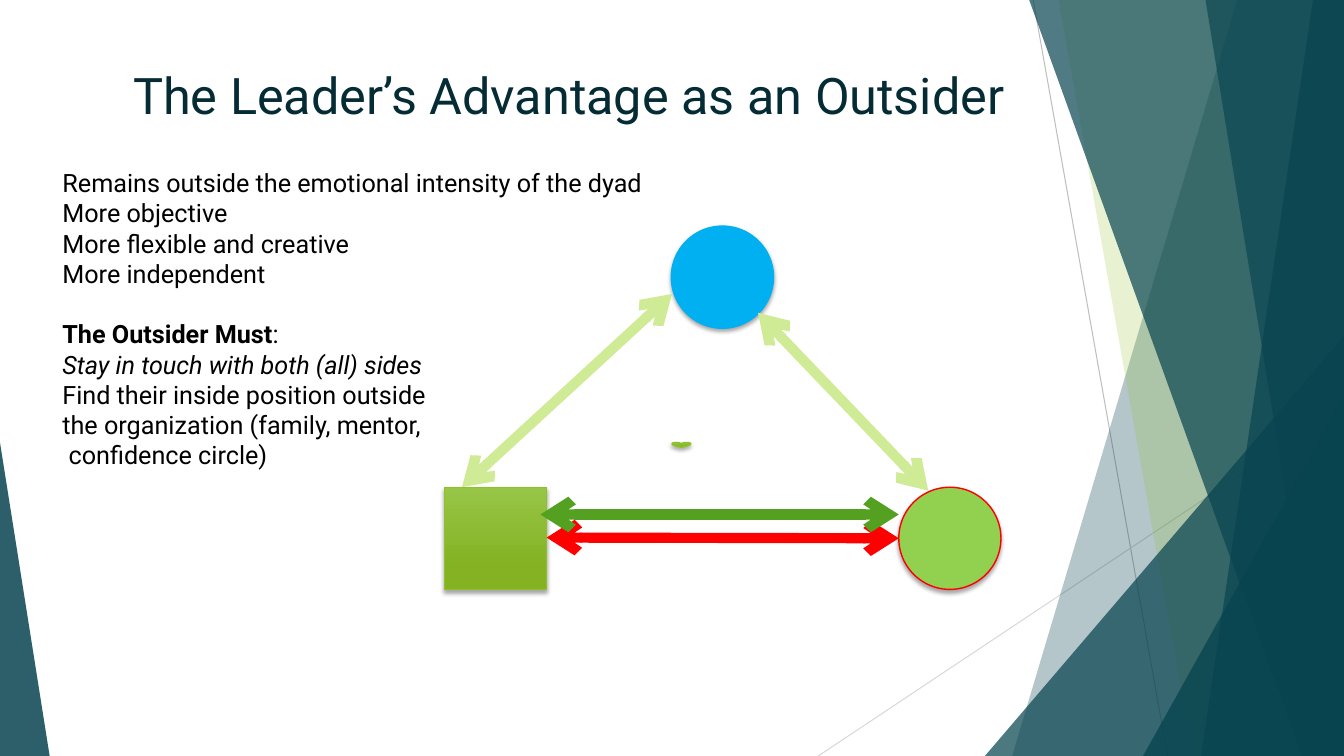
from lxml import etree
from pptx import Presentation
from pptx.dml.color import RGBColor
from pptx.enum import shapes, text
from pptx.oxml import ns
from pptx.util import Pt

COLORS = {
    "teal": "084450", "lime": "90C226", "title": "052C34", "ink": "000000",
    "gray": "BFBFBF", "pale": "D9D9D9", "blue": "00B0F0", "leaf": "92D050",
    "red": "FF0000", "green": "54A021", "light": "D0EB96",
    "top": "97C547", "base": "84B223",
}
FONT = "Roboto"
WIDTH, HEIGHT = 960, 540
KIND = shapes.MSO_SHAPE


def rgb(name):
    return RGBColor.from_string(COLORS[name])


def add(parent, tag, **attrs):
    return etree.SubElement(parent, ns.qn(tag), attrs)


class Board:
    """Holds the current slide and draws styled elements, in points."""

    def __init__(self, slide):
        self.shapes = slide.shapes

    def tint(self, shape, color, alpha):
        """Fill with a see-through colour, without outline or shadow."""
        shape.fill.solid()
        shape.fill.fore_color.rgb = rgb(color)
        tone = shape.fill._xPr.find(".//" + ns.qn("a:srgbClr"))
        add(tone, "a:alpha", val=str(alpha * 1000))
        shape.line.fill.background()
        shape.shadow.inherit = False

    def band(self, top, foot, color, alpha):
        """Panel from a slanted left edge to the right side of the slide."""
        pen = self.shapes.build_freeform(Pt(top), Pt(-0.5))
        pen.add_line_segments([(Pt(x), Pt(y)) for x, y in
                               ((WIDTH, -0.5), (WIDTH, HEIGHT), (foot, HEIGHT))])
        self.tint(pen.convert_to_shape(), color, alpha)

    def wedge(self, x, y, w, tip, alpha):
        """Triangle standing on the bottom edge of the slide."""
        shape = self.shapes.add_shape(KIND.ISOSCELES_TRIANGLE,
                                      Pt(x), Pt(y), Pt(w), Pt(HEIGHT - y))
        shape.adjustments[0] = tip
        self.tint(shape, "teal", alpha)

    def node(self, kind, x, y, w, h, line, fill=None):
        """Shadowed shape; a green gradient stands in for a missing fill."""
        shape = self.shapes.add_shape(kind, Pt(x), Pt(y), Pt(w), Pt(h))
        if fill:
            shape.fill.solid()
            shape.fill.fore_color.rgb = rgb(fill)
        else:
            shape.fill.gradient()
            shape.fill.gradient_angle = 270
            stops = shape.fill.gradient_stops
            for stop, spot, name in zip(stops, (0, 0.78), ("top", "base")):
                stop.position = spot
                stop.color.rgb = rgb(name)
        shape.line.color.rgb = rgb(line)
        shape.line.width = Pt(1)
        shape.shadow.inherit = False
        effects = shape._element.spPr.find(ns.qn("a:effectLst"))
        cast = add(effects, "a:outerShdw", blurRad=str(Pt(3)), dist=str(Pt(2)),
                   dir="5400000", rotWithShape="0")
        add(add(cast, "a:srgbClr", val=COLORS["ink"]), "a:alpha", val="35000")

    def link(self, start, end, color, width=0.75, arrows=False):
        line = self.shapes.add_connector(
            shapes.MSO_CONNECTOR.STRAIGHT, *map(Pt, start + end))
        line.line.color.rgb = rgb(color)
        line.line.width = Pt(width)
        if arrows:
            for tag in ("a:headEnd", "a:tailEnd"):
                add(line.line._ln, tag, type="arrow")
        add(line._element.spPr, "a:effectLst")

    def label(self, box, lines, size, color, inset=3.6):
        """Each line is a list of (words, style); style holds b, i or g (gap above)."""
        frame = self.shapes.add_textbox(*map(Pt, box)).text_frame
        frame.word_wrap = True
        frame.vertical_anchor = text.MSO_ANCHOR.TOP
        frame.margin_top = Pt(inset)
        frame.text = "\n".join(line[0][0] for line in lines)
        for para, line in zip(frame.paragraphs, lines):
            for words, _ in line[1:]:
                para.add_run().text = words
            for run, (_, style) in zip(para.runs, line):
                run.font.name = FONT
                run.font.size = Pt(size)
                run.font.color.rgb = rgb(color)
                run.font.bold = "b" in style
                run.font.italic = "i" in style
                if "g" in style:
                    para.space_before = Pt(21.6)


def main():
    deck = Presentation()
    deck.slide_width, deck.slide_height = Pt(WIDTH), Pt(HEIGHT)
    board = Board(deck.slides.add_slide(deck.slide_layouts[6]))

    board.link((738, 0), (834, HEIGHT), "gray")
    board.link((WIDTH, 290), (584.5, HEIGHT), "pale")
    board.band(884, 723, "teal", 30)
    board.band(756, 852, "lime", 20)
    board.wedge(703.5, 240, 256.5, 1, 72)
    board.band(735, 930, "teal", 70)
    board.band(938, 858, "teal", 70)
    board.band(861, 949, "teal", 65)
    board.wedge(816.5, 283, 143.5, 1, 80)
    board.wedge(0, 316, 35.5, 0, 85)

    board.label((88, 42, 675, 65),
                [[("The Leader’s Advantage as an Outsider", "")]], 36, "title")

    side = 73
    board.node(KIND.OVAL, 479.5, 161.5, side, side, "blue", "blue")
    board.node(KIND.OVAL, 642, 348, side, side, "red", "leaf")
    board.node(KIND.RECTANGLE, 317.5, 348, side, side, "lime")
    for start, end, color in (
        ((390.5, 384), (642, 384.5), "red"),
        ((386, 367.5), (642, 367.5), "green"),
        ((480, 210), (330, 348), "light"),
        ((663, 350.5), (541.5, 223.5), "light"),
    ):
        board.link(start, end, color, 7.25, True)
    board.node(KIND.HEART, 480, 316, 13.5, 3.5, "lime")

    board.label((37.5, 94.5, 496, 269), [
        [("Remains outside the emotional intensity of the dyad", "")],
        [("More objective", "")],
        [("More flexible and creative", "")],
        [("More independent", "")],
        [("The Outsider Must", "bg"), (":", "")],
        [("Stay in touch with both (all) sides", "i")],
        [("Find their inside position outside", "")],
        [("the organization (family, mentor,", "")],
        [(" confidence circle)", "")],
    ], 18, "ink", inset=25.2)

    deck.save("out.pptx")


if __name__ == "__main__":
    main()
